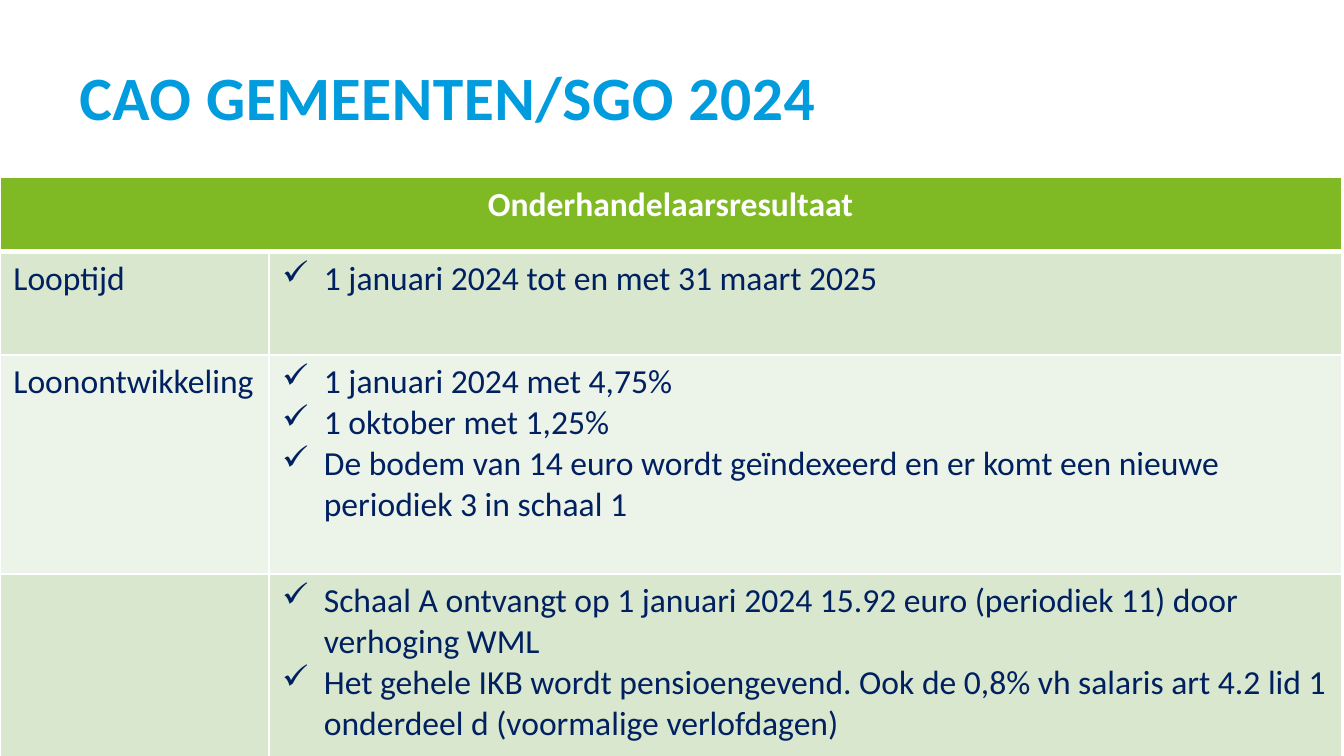
from dataclasses import dataclass

from lxml.etree import SubElement
from pptx import Presentation
from pptx.dml.color import RGBColor
from pptx.enum.text import PP_ALIGN
from pptx.oxml.ns import qn
from pptx.util import Inches, Pt


@dataclass(frozen=True)
class Theme:
    font: str = "Calibri"
    title_size: int = 33
    body_size: int = 18
    title: str = "009CDE"
    body: str = "002060"
    header: str = "7FBA25"
    dark_band: str = "D8E7CD"
    light_band: str = "ECF3E8"
    white: str = "FFFFFF"


THEME = Theme()
WIDTH = Inches(10)
HEIGHT = WIDTH * 9 // 16
COLUMN_WIDTHS = (2, 7.98)
ROW_HEIGHTS = (0.55, 0.77, 1.63, 1.89)
TOPICS = [
    ("Looptijd", ["1 januari 2024 tot en met 31 maart 2025"]),
    ("Loonontwikkeling", [
        "1 januari 2024 met 4,75%",
        "1 oktober met 1,25%",
        "De bodem van 14 euro wordt geïndexeerd en er komt een nieuwe periodiek 3 in schaal 1",
    ]),
    ("", [
        "Schaal A ontvangt op 1 januari 2024 15.92 euro (periodiek 11) door verhoging WML",
        "Het gehele IKB wordt pensioengevend. Ook de 0,8% vh salaris art 4.2 lid 1 "
        "onderdeel d (voormalige verlofdagen)",
    ]),
]


def style_font(font, size, color, bold):
    font.name, font.size, font.bold = THEME.font, Pt(size), bold
    font.color.rgb = RGBColor.from_string(color)


def add_check_mark(paragraph):
    """Give the paragraph a hanging check mark as its bullet."""
    properties = paragraph._p.get_or_add_pPr()
    properties.set("marL", str(Inches(0.31)))
    properties.set("indent", str(-Inches(0.31)))
    SubElement(properties, qn("a:buChar"), char="✓")


deck = Presentation()
deck.slide_width, deck.slide_height = WIDTH, HEIGHT
page = deck.slides.add_slide(deck.slide_layouts[6])

# Title
box = page.shapes.add_textbox(Inches(0.59), Inches(0.36), Inches(7.97), Inches(0.62))
frame = box.text_frame
frame.word_wrap = True
frame.margin_left = frame.margin_top = frame.margin_right = frame.margin_bottom = 0
paragraph = frame.paragraphs[0]
paragraph.line_spacing = Pt(45)
span = paragraph.add_run()
span.text = "CAO GEMEENTEN/SGO 2024"
style_font(paragraph.font, THEME.title_size, THEME.title, True)
span.font._element.set("spc", "30")

# Table grid
table = page.shapes.add_table(
    len(ROW_HEIGHTS), len(COLUMN_WIDTHS),
    0, Inches(1.32), Inches(sum(COLUMN_WIDTHS)), Inches(sum(ROW_HEIGHTS)),
).table
for column, width in zip(table.columns, COLUMN_WIDTHS):
    column.width = Inches(width)
for row, height in zip(table.rows, ROW_HEIGHTS):
    row.height = Inches(height)

# Borders and bands
bands = (THEME.header, THEME.dark_band, THEME.light_band, THEME.dark_band)
for row_index, (row, band) in enumerate(zip(table.rows, bands)):
    for cell in row.cells:
        for side in ("lnL", "lnR", "lnT", "lnB"):
            under_header = (row_index, side) in ((0, "lnB"), (1, "lnT"))
            line = SubElement(cell._tc.get_or_add_tcPr(), qn(f"a:{side}"),
                              w=str(Pt(3 if under_header else 1)))
            SubElement(SubElement(line, qn("a:solidFill")), qn("a:srgbClr"), val=THEME.white)
        cell.fill.solid()
        cell.fill.fore_color.rgb = RGBColor.from_string(band)

# Header text
header = table.cell(0, 0)
header.merge(table.cell(0, 1))
header.text = "Onderhandelaarsresultaat"
paragraph = header.text_frame.paragraphs[0]
paragraph.alignment = PP_ALIGN.CENTER
style_font(paragraph.font, THEME.body_size, THEME.white, True)

# Topics with their checked points
for row_index, (topic, points) in enumerate(TOPICS, start=1):
    topic_cell, points_cell = table.rows[row_index].cells
    topic_cell.text = topic
    points_cell.text = "\n".join(points)
    for paragraph in points_cell.text_frame.paragraphs:
        add_check_mark(paragraph)
    for cell in (topic_cell, points_cell):
        for paragraph in cell.text_frame.paragraphs:
            style_font(paragraph.font, THEME.body_size, THEME.body, False)

deck.save("out.pptx")
